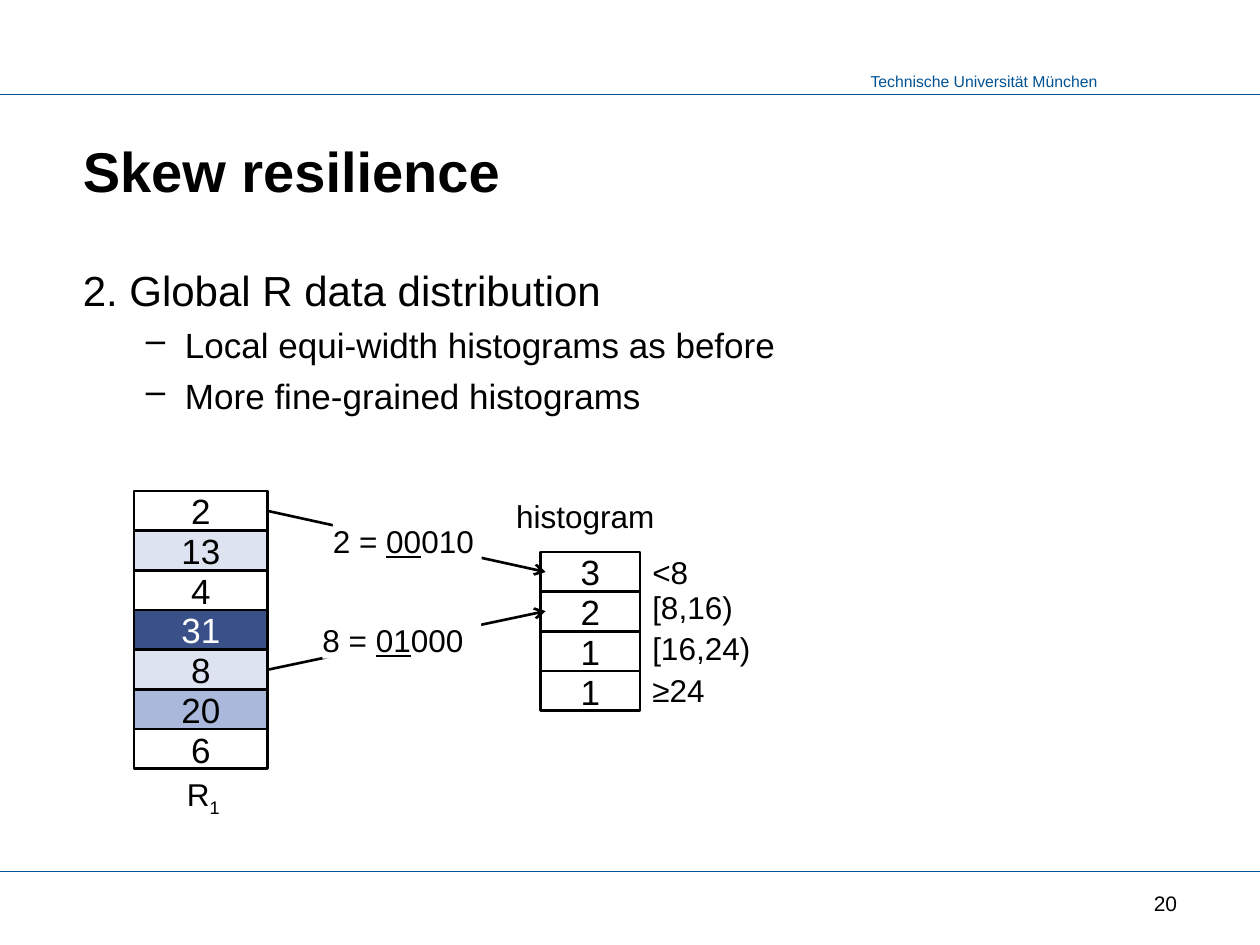
import lxml.etree
import pptx
import pptx.dml.color
import pptx.enum.shapes
import pptx.enum.text
import pptx.oxml.ns
import pptx.util

Cm, Pt = pptx.util.Cm, pptx.util.Pt
PP_ALIGN, MSO_ANCHOR = pptx.enum.text.PP_ALIGN, pptx.enum.text.MSO_ANCHOR
MSO_AUTO_SIZE = pptx.enum.text.MSO_AUTO_SIZE


class Theme:
    FONT = "Arial"
    BLACK, WHITE, BLUE = "000000", "FFFFFF", "005293"
    PALE, MEDIUM, DARK = "DDE3F1", "AAB8DB", "3A5089"
    TITLE, HEADING, BODY, LABEL, NUMBER, HEADER = 32, 24, 20, 18, 12, 9
    RULE, EDGE = 0.75, 1.5


# Content
UNIVERSITY = "Technische Universität München"
TITLE = "Skew resilience"
HEADING = "2. Global R data distribution"
POINTS = ["Local equi-width histograms as before", "More fine-grained histograms"]
RELATION = [
    ("2", Theme.WHITE), ("13", Theme.PALE), ("4", Theme.WHITE), ("31", Theme.DARK),
    ("8", Theme.PALE), ("20", Theme.MEDIUM), ("6", Theme.WHITE),
]
COUNTS = [(count, Theme.WHITE) for count in "3211"]
# range text, top, width
RANGES = [("<8", 11.02, 1.6), ("[8,16)", 11.73, 2.2),
          ("[16,24)", 12.55, 2.6), ("≥24", 13.41, 1.6)]
# relation row, arrow end (x, y), label box, label parts: plain, underlined, plain
LOOKUPS = [
    (0, (11, 11.53), (6.71, 10.52, 3, 0.76), ("2 = ", "00", "010")),
    (4, (11, 12.32), (6.5, 12.52, 3.2, 0.76), ("8 = ", "01", "000")),
]
PAGE = "20"

# Layout in centimetres
WIDTH, HEIGHT = 25.4, 19.05
ROW = 0.8
RELATION_AT = (2.7, 9.9, 2.7)
HISTOGRAM_AT = (10.9, 11.13, 2)

deck = pptx.Presentation()
deck.slide_width, deck.slide_height = Cm(WIDTH), Cm(HEIGHT)
slide = deck.slides.add_slide(deck.slide_layouts[6])


def rgb(color):
    return pptx.dml.color.RGBColor.from_string(color)


def style(paragraph, size, color=Theme.BLACK, bold=False):
    for run in paragraph.runs:
        run.font.name, run.font.size, run.font.bold = Theme.FONT, Pt(size), bold
        run.font.color.rgb = rgb(color)


def add_text(box, text, size, color=Theme.BLACK, bold=False,
             align=PP_ALIGN.LEFT, anchor=MSO_ANCHOR.TOP, wrap=True):
    frame = slide.shapes.add_textbox(*map(Cm, box)).text_frame
    frame.word_wrap, frame.vertical_anchor = wrap, anchor
    frame.text = text
    frame.paragraphs[0].alignment = align
    style(frame.paragraphs[0], size, color, bold)
    return frame


def add_rectangle(box, fill):
    rectangle = slide.shapes.add_shape(
        pptx.enum.shapes.MSO_SHAPE.RECTANGLE, *map(Cm, box))
    rectangle.shadow.inherit = False
    rectangle.fill.solid()
    rectangle.fill.fore_color.rgb = rgb(fill)
    rectangle.line.fill.background()
    return rectangle


def add_line(start, end, color, width):
    line = slide.shapes.add_connector(
        pptx.enum.shapes.MSO_CONNECTOR.STRAIGHT, *map(Cm, start + end))
    line.line.color.rgb, line.line.width = rgb(color), Pt(width)
    lxml.etree.SubElement(line._element.spPr, pptx.oxml.ns.qn("a:effectLst"))
    return line


def add_column(at, rows):
    left, top, width = at
    cells = []
    for index, (value, fill) in enumerate(rows):
        cell = add_rectangle((left, top + index * ROW, width, ROW), fill)
        cell.line.color.rgb, cell.line.width = rgb(Theme.BLACK), Pt(Theme.EDGE)
        cell.text_frame.text = value
        cell.text_frame.vertical_anchor = MSO_ANCHOR.MIDDLE
        paragraph = cell.text_frame.paragraphs[0]
        paragraph.alignment = PP_ALIGN.CENTER
        style(paragraph, Theme.BODY, Theme.WHITE if fill == Theme.DARK else Theme.BLACK)
        cells.append(cell)
    return cells


def indent(paragraph, margin, hanging):
    properties = paragraph._p.get_or_add_pPr()
    properties.set("marL", str(Cm(margin)))
    properties.set("indent", str(-Cm(hanging)))
    return properties


# Header, footer rules and page number
add_text((17.3, 1.32, 5.1, 0.64), UNIVERSITY, Theme.HEADER, Theme.BLUE, wrap=False)
for y in (17.57, 1.9):
    add_line((0, y), (WIDTH, y), Theme.BLUE, Theme.RULE)
add_text((18.7, 17.78, 5.28, 0.84), PAGE, Theme.NUMBER,
         align=PP_ALIGN.RIGHT, anchor=MSO_ANCHOR.MIDDLE)

# Title and points
add_text((1.42, 2.54, 22.58, 1.7), TITLE, Theme.TITLE, bold=True, anchor=MSO_ANCHOR.BOTTOM)
body = add_text((1.42, 5.2, 22.58, 4.2), HEADING, Theme.HEADING)
indent(body.paragraphs[0], 0.97, 0.97)
for point in POINTS:
    paragraph = body.add_paragraph()
    paragraph.text = point
    paragraph.space_before = Pt(5)
    bullet = lxml.etree.SubElement(
        indent(paragraph, 2.06, 0.79), pptx.oxml.ns.qn("a:buChar"))
    bullet.set("char", "–")
    style(paragraph, Theme.BODY)

# Relation and histogram
relation = add_column(RELATION_AT, RELATION)
add_column(HISTOGRAM_AT, COUNTS)
add_text((9.7, 9.9, 4.2, 1.02), "histogram", Theme.LABEL, align=PP_ALIGN.CENTER)
for text, top, width in RANGES:
    add_text((12.9, top, width, 1.02), text, Theme.LABEL)
caption = add_text((3.3, 15.5, 1.6, 1.02), "R", Theme.LABEL,
                   align=PP_ALIGN.CENTER).paragraphs[0]
subscript = caption.add_run()
subscript.text = "1"
style(caption, Theme.LABEL)
subscript._r.get_or_add_rPr().set("baseline", "-25000")

# Lookup arrows with their binary labels on top
for row, end, label_box, parts in LOOKUPS:
    arrow = add_line((0, 0), end, Theme.BLACK, Theme.EDGE)
    arrow.begin_connect(relation[row], 3)
    head = lxml.etree.SubElement(arrow.line._get_or_add_ln(), pptx.oxml.ns.qn("a:tailEnd"))
    head.set("type", "arrow")

    frame = add_rectangle(label_box, Theme.WHITE).text_frame
    frame.margin_left = frame.margin_right = frame.margin_top = frame.margin_bottom = 0
    frame.auto_size = MSO_AUTO_SIZE.SHAPE_TO_FIT_TEXT
    frame.vertical_anchor = MSO_ANCHOR.TOP
    label = frame.paragraphs[0]
    label.alignment = PP_ALIGN.LEFT
    for part in parts:
        label.add_run().text = part
    style(label, Theme.LABEL)
    label.runs[1].font.underline = True

deck.save("out.pptx")
